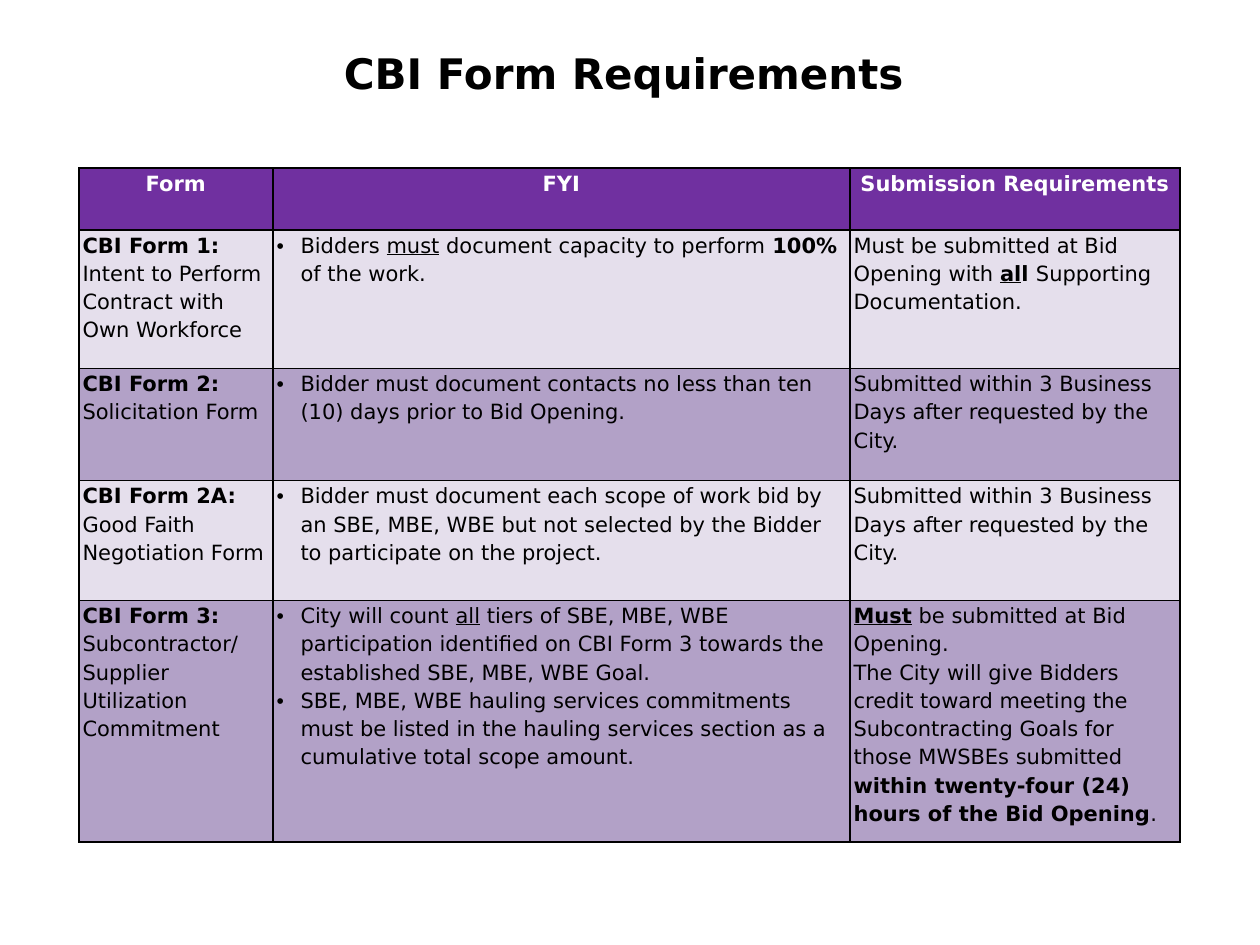
from dataclasses import dataclass

from lxml import etree
from pptx import Presentation
from pptx import util as u
from pptx.dml.color import RGBColor
from pptx.enum import text
from pptx.oxml.ns import qn


@dataclass(frozen=True)
class Theme:
    font: str = "DejaVu Sans"
    head: str = "7030A0"
    bands: tuple = ("E5DFEC", "B2A1C7")
    ink: str = "000000"
    white: str = "FFFFFF"
    title: int = 24
    body: int = 12
    lead: float = 1.15
    line: int = 1


THEME = Theme()
WIDE, HIGH = u.Inches(10), u.Inches(7.5)
COLS = (15.4, 45.8, 26.2)
ROWS = (6.53, 14.67, 11.87, 12.67, 25.6)
HEADS = ("Form", "FYI", "Submission Requirements")
LATER = [[("Submitted within 3 Business Days after requested by the City.", "")]]
FORMS = [
    (
        [[("CBI Form 1: ", "b"), ("Intent to Perform Contract with Own Workforce", "")]],
        [[("Bidders ", ""), ("must", "u"), (" document capacity to perform ", ""),
          ("100% ", "b"), ("of the work.", "")]],
        [[("Must be submitted at Bid Opening with ", ""), ("al", "bu"), ("l ", "b"),
          ("Supporting Documentation.", "")]],
    ),
    (
        [[("CBI Form 2: ", "b"), ("Solicitation Form", "")]],
        [[("Bidder must document contacts no less than ten (10) days prior to Bid Opening.", "")]],
        LATER,
    ),
    (
        [[("CBI Form 2A: ", "b"), ("Good Faith Negotiation Form", "")]],
        [[("Bidder must document each scope of work bid by an SBE, MBE, WBE but not "
           "selected by the Bidder to participate on the project.", "")]],
        LATER,
    ),
    (
        [[("CBI Form 3: ", "b"), ("Subcontractor/", "")],
         [("Supplier Utilization Commitment", "")]],
        [[("City will count ", ""), ("all", "u"),
          (" tiers of SBE, MBE, WBE participation identified on CBI Form 3 towards "
           "the established SBE, MBE, WBE Goal.", "")],
         [("SBE, MBE, WBE hauling services commitments must be listed in the hauling "
           "services section as a cumulative total scope amount.", "")]],
        [[("Must", "bu"), (" be submitted at Bid Opening.", "")],
         [("The City will give Bidders credit toward meeting the Subcontracting Goals "
           "for those MWSBEs submitted ", ""),
          ("within twenty-four (24) hours of the Bid Opening", "b"), (".", "")]],
    ),
]


def across(share):
    return round(WIDE * share / 100)


def down(share):
    return round(HIGH * share / 100)


def add_run(para, words, style, size, hue):
    run = para.add_run()
    run.text = words
    font = run.font
    font.name, font.size = THEME.font, u.Pt(size)
    font.bold, font.underline = "b" in style, "u" in style
    font.color.rgb = RGBColor.from_string(hue)


def add_dot(para):
    props = para._p.get_or_add_pPr()
    indent = u.Inches(0.19)
    props.set("marL", str(indent))
    props.set("indent", str(-indent))
    etree.SubElement(props, qn("a:buFont"), typeface="Arial")
    etree.SubElement(props, qn("a:buChar"), char="•")


def add_edge(cell):
    props = cell._tc.get_or_add_tcPr()
    for side in "LRTB":
        line = etree.SubElement(props, qn(f"a:ln{side}"), w=str(u.Pt(THEME.line)))
        fill = etree.SubElement(line, qn("a:solidFill"))
        etree.SubElement(fill, qn("a:srgbClr"), val=THEME.ink)


def fill_cell(cell, paras, back, hue, align, dots=False):
    add_edge(cell)
    cell.fill.solid()
    cell.fill.fore_color.rgb = RGBColor.from_string(back)
    cell.margin_left = cell.margin_right = u.Inches(0.03)
    cell.margin_top = cell.margin_bottom = 0
    frame = cell.text_frame
    for index, runs in enumerate(paras):
        para = frame.add_paragraph() if index else frame.paragraphs[0]
        if dots:
            add_dot(para)
        para.alignment = align
        para.line_spacing = THEME.lead
        for words, style in runs:
            add_run(para, words, style, THEME.body, hue)


def add_title(slide):
    title = slide.shapes.title
    title.left, title.top = across(22.4), down(4.4)
    title.width, title.height = across(54.2), down(13.33)
    frame = title.text_frame
    frame.word_wrap = True
    frame.auto_size = text.MSO_AUTO_SIZE.NONE
    frame.vertical_anchor = text.MSO_ANCHOR.TOP
    para = frame.paragraphs[0]
    para.alignment = text.PP_ALIGN.CENTER
    add_run(para, "CBI Form Requirements", "b", THEME.title, THEME.ink)


def add_grid(slide):
    frame = slide.shapes.add_table(
        len(ROWS), len(COLS), across(6.25), down(17.8), across(sum(COLS)), down(sum(ROWS)))
    grid = frame.table
    for col, share in zip(grid.columns, COLS):
        col.width = across(share)
    for row, share in zip(grid.rows, ROWS):
        row.height = down(share)
    for col, label in enumerate(HEADS):
        fill_cell(grid.cell(0, col), [[(label, "b")]], THEME.head, THEME.white,
                  text.PP_ALIGN.CENTER)
    for row, form in enumerate(FORMS):
        for col, paras in enumerate(form):
            fill_cell(grid.cell(row + 1, col), paras, THEME.bands[row % 2], THEME.ink,
                      text.PP_ALIGN.LEFT, dots=col == 1)


def main():
    deck = Presentation()
    deck.slide_width, deck.slide_height = WIDE, HIGH
    slide = deck.slides.add_slide(deck.slide_layouts[5])
    add_grid(slide)
    add_title(slide)
    deck.save("out.pptx")


if __name__ == "__main__":
    main()
